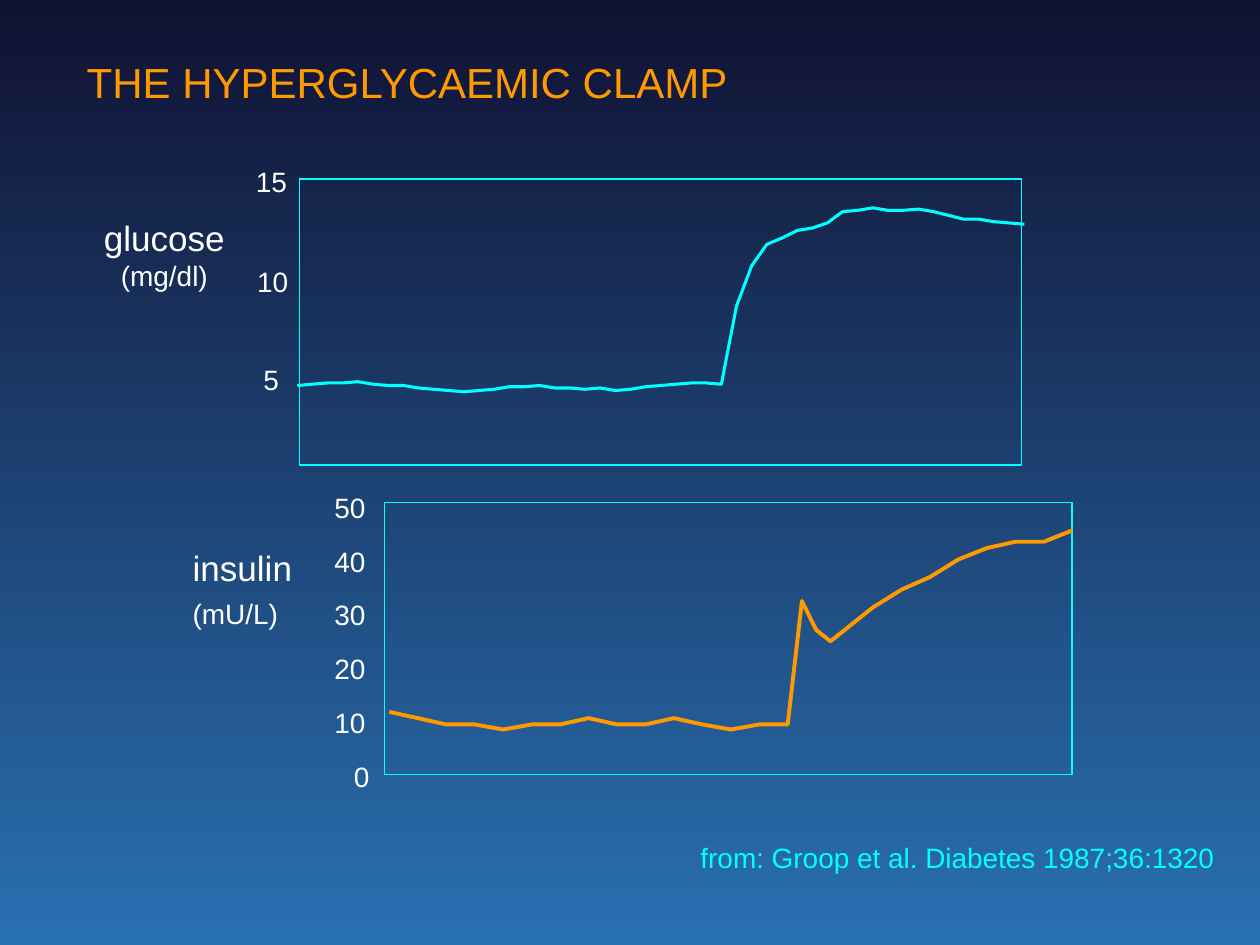
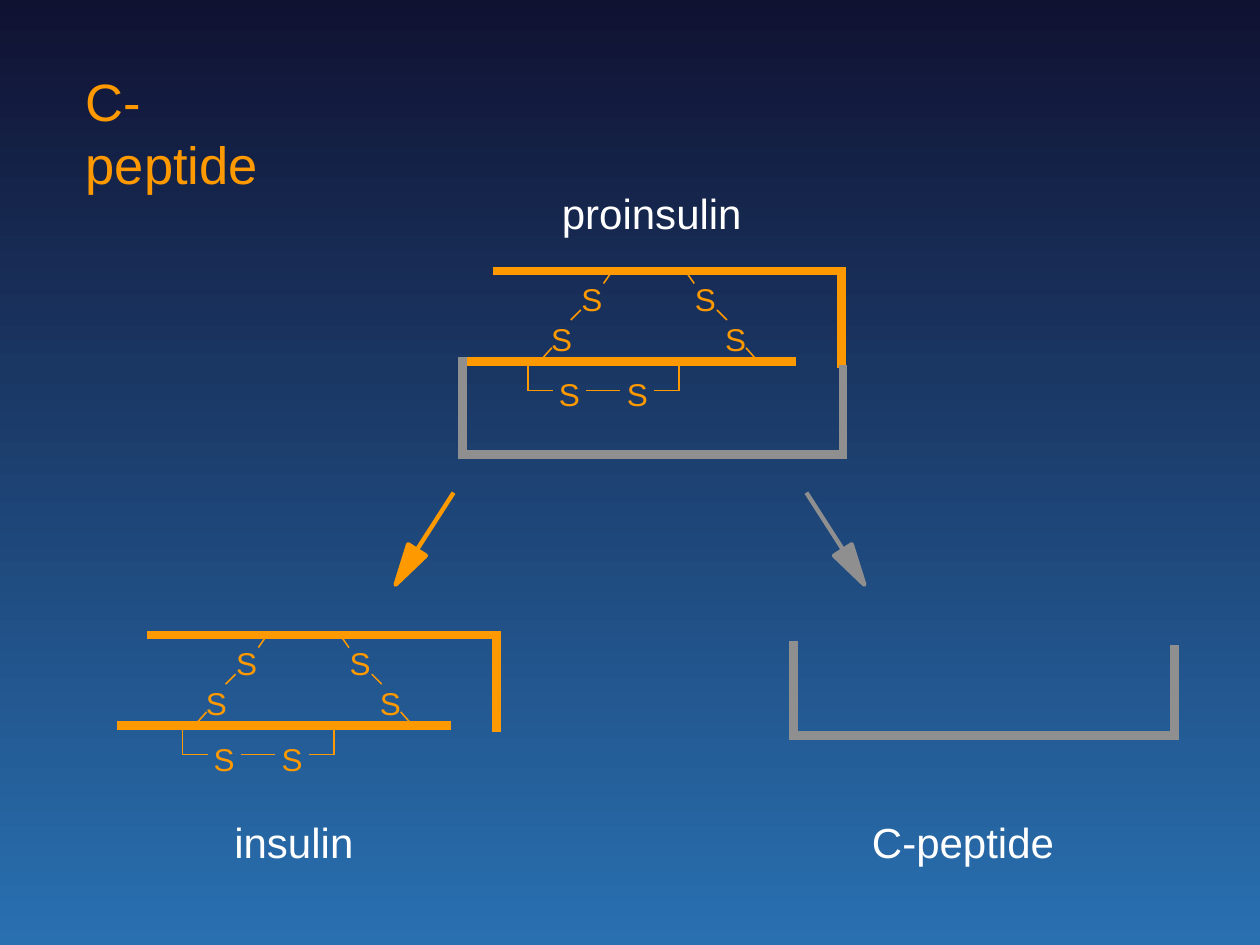
from lxml.etree import SubElement
from pptx import Presentation
from pptx.dml.color import RGBColor
from pptx.enum.shapes import MSO_CONNECTOR, MSO_SHAPE
from pptx.enum.text import MSO_AUTO_SIZE, PP_ALIGN
from pptx.oxml.ns import qn
from pptx.util import Inches, Pt

NIGHT = RGBColor(0x10, 0x12, 0x32)
BLUE = RGBColor(0x29, 0x70, 0xB1)
ORANGE = RGBColor(0xFF, 0x99, 0x00)
CYAN = RGBColor(0x00, 0xFF, 0xFF)
GREY = RGBColor(0x8F, 0x8F, 0x8F)
WHITE = RGBColor(0xFF, 0xFF, 0xFF)
FONT = "Arial"

CHAIN = 5
BOND = 0.88
ARROW = 2.5
CURVE_STEPS = 48

GLUCOSE = [
    3.06, 3.05, 3.04, 3.04, 3.03, 3.05, 3.06, 3.06, 3.08, 3.09,
    3.10, 3.11, 3.10, 3.09, 3.07, 3.07, 3.06, 3.08, 3.08, 3.09,
    3.08, 3.10, 3.09, 3.07, 3.06, 3.05, 3.04, 3.04, 3.05, 2.43,
    2.11, 1.94, 1.89, 1.83, 1.81, 1.77, 1.68, 1.67, 1.65, 1.67,
    1.67, 1.66, 1.68, 1.71, 1.74, 1.74, 1.76, 1.77, 1.78,
]
INSULIN_STEPS = [*range(0, 28, 2), *range(28, 34), *range(34, 49, 2)]
INSULIN = [
    5.65, 5.70, 5.75, 5.75, 5.79, 5.75, 5.75, 5.70, 5.75, 5.75,
    5.70, 5.75, 5.79, 5.75, 5.75, 4.77, 5.00, 5.09, 5.00, 4.91,
    4.82, 4.68, 4.58, 4.44, 4.35, 4.30, 4.30, 4.21,
]


def set_background(master):
    fill = master.background.fill
    fill.gradient()
    fill.gradient_angle = 270
    for stop, position, color in zip(fill.gradient_stops, (0, 1), (NIGHT, BLUE)):
        stop.position = position
        stop.color.rgb = color


def add_text(s, x, y, w, h, lines, color=WHITE, align=PP_ALIGN.LEFT,
             wrap=False, inset=(0, 0), gap=0):
    tf = s.shapes.add_textbox(Inches(x), Inches(y), Inches(w), Inches(h)).text_frame
    tf.margin_left = tf.margin_right = Inches(inset[0])
    tf.margin_top = tf.margin_bottom = Inches(inset[1])
    tf.word_wrap = wrap
    tf.auto_size = MSO_AUTO_SIZE.SHAPE_TO_FIT_TEXT
    tf.text = "\n".join(text for text, _ in lines)
    for i, (p, (_, size)) in enumerate(zip(tf.paragraphs, lines)):
        p.alignment = align
        p.space_before = Pt(gap if i else 0)
        for r in p.runs:
            r.font.name = FONT
            r.font.size = Pt(size)
            r.font.color.rgb = color


def add_line(s, x1, y1, x2, y2, color, width):
    line = s.shapes.add_connector(
        MSO_CONNECTOR.STRAIGHT, Inches(x1), Inches(y1), Inches(x2), Inches(y2))
    line.line.color.rgb = color
    line.line.width = Pt(width)
    SubElement(line._element.spPr, qn("a:effectLst"))


def add_outline(s, points, color, width, closed=False):
    (x, y), *rest = [(Inches(px), Inches(py)) for px, py in points]
    builder = s.shapes.build_freeform(x, y)
    builder.add_line_segments(rest, close=closed)
    sp = builder.convert_to_shape()
    sp.line.color.rgb = color
    sp.line.width = Pt(width)
    if closed:
        sp.fill.solid()
        sp.fill.fore_color.rgb = color
    else:
        sp.fill.background()
    sp.shadow.inherit = False


def add_plot_frame(s, x, y, w, h):
    sp = s.shapes.add_shape(
        MSO_SHAPE.RECTANGLE, Inches(x), Inches(y), Inches(w), Inches(h))
    sp.fill.background()
    sp.line.color.rgb = CYAN
    sp.line.width = Pt(0.75)
    sp.shadow.inherit = False


def add_curve(s, x, w, steps, heights, color, width):
    points = [(x + w * step / CURVE_STEPS, y) for step, y in zip(steps, heights)]
    add_outline(s, points, color, width)


def add_sulphur(s, center, y):
    add_text(s, center - 0.085, y, 0.17, 0.3, [("S", 18)], ORANGE)


def add_insulin_chains(s, x, y):
    def bond(x1, y1, x2, y2, width=BOND):
        add_line(s, x + x1, y + y1, x + x2, y + y2, ORANGE, width)

    bond(0.24, 0, 3.01, 0, CHAIN)
    bond(3.01, -0.03, 3.01, 0.77, CHAIN)
    bond(0, 0.72, 2.65, 0.72, CHAIN)

    bridge_axis, loop_axis = 1.48, 1.12
    for side in (-1, 1):
        for outer, low, inner, high in (
                (0.85, 0.7, 0.77, 0.61), (0.62, 0.39, 0.54, 0.31), (0.36, 0.1, 0.29, 0)):
            bond(bridge_axis + side * outer, low, bridge_axis + side * inner, high)
        for offset, top in ((0.45, 0.07), (0.69, 0.39)):
            add_sulphur(s, x + bridge_axis + side * offset, y + top)
        corner = loop_axis + side * 0.6
        bond(corner, 0.75, corner, 0.95)
        bond(corner, 0.95, loop_axis + side * 0.4, 0.95)
        add_sulphur(s, x + loop_axis + side * 0.27, y + 0.83)
    bond(loop_axis - 0.14, 0.95, loop_axis + 0.13, 0.95)


def add_c_peptide(s, x, bottom, left_leg, right_leg):
    w = 3.02
    for leg_x, leg in ((x, left_leg), (x + w, right_leg)):
        add_line(s, leg_x, bottom - leg, leg_x, bottom + 0.03, GREY, CHAIN)
    add_line(s, x, bottom, x + w, bottom, GREY, CHAIN)


def add_split_arrow(s, side, color):
    def mirrored(offset):
        return 5 + side * offset

    add_line(s, mirrored(1.4), 3.91, mirrored(1.83), 4.58, color, ARROW)
    head = [(mirrored(dx), y) for dx, y in ((1.62, 4.41), (1.86, 4.64), (1.76, 4.32))]
    add_outline(s, head, color, ARROW, closed=True)


def build_clamp_slide(s):
    add_plot_frame(s, 2.38, 1.42, 5.73, 2.27)
    for label, x, y, w in (("5", 2.09, 2.88, 0.12), ("10", 2.04, 2.1, 0.25),
                           ("15", 2.03, 1.31, 0.25)):
        add_text(s, x, y, w, 0.27, [(label, 16)])
    add_curve(s, 2.36, 5.77, range(CURVE_STEPS + 1), GLUCOSE, CYAN, 1.75)
    add_text(s, 0.82, 1.72, 0.97, 0.61, [("glucose", 20), ("(mg/dl)", 16)],
             align=PP_ALIGN.CENTER)

    add_plot_frame(s, 3.05, 3.99, 5.46, 2.16)
    for i, value in enumerate(range(50, 0, -10)):
        add_text(s, 2.65, 3.89 + 0.428 * i, 0.25, 0.27, [(str(value), 16)],
                 align=PP_ALIGN.RIGHT)
    add_text(s, 2.81, 6.03, 0.12, 0.27, [("0", 16)], align=PP_ALIGN.RIGHT)
    add_curve(s, 3.09, 5.42, INSULIN_STEPS, INSULIN, ORANGE, 2.25)
    add_text(s, 1.53, 4.34, 0.8, 0.67, [("insulin", 20), ("(mU/L)", 16)], gap=4.5)

    add_text(s, 5.56, 6.67, 4.13, 0.27,
             [("from: Groop et al. Diabetes 1987;36:1320", 16)], CYAN)
    add_text(s, 0.59, 0.4, 5.34, 0.51, [("THE HYPERGLYCAEMIC CLAMP", 24)], ORANGE,
             inset=(0.1, 0.05))


def build_peptide_slide(s):
    add_text(s, 0.68, 0.55, 1.75, 1, [("C-peptide", 30)], ORANGE, wrap=True)
    add_insulin_chains(s, 3.67, 2.15)
    add_c_peptide(s, 3.67, 3.61, 0.78, 0.71)
    add_insulin_chains(s, 0.93, 5.04)
    add_c_peptide(s, 6.3, 5.84, 0.75, 0.72)
    for name, x, y, w in (("proinsulin", 4.46, 1.49, 1.43), ("insulin", 1.86, 6.48, 0.95),
                          ("C-peptide", 6.92, 6.48, 1.45)):
        add_text(s, x, y, w, 0.4, [(name, 24)])
    add_split_arrow(s, -1, ORANGE)
    add_split_arrow(s, 1, GREY)


def main():
    prs = Presentation()
    prs.slide_width = Inches(10)
    prs.slide_height = Inches(7.5)
    set_background(prs.slide_master)
    for build in (build_clamp_slide, build_peptide_slide):
        build(prs.slides.add_slide(prs.slide_layouts[6]))
    prs.save("out.pptx")


if __name__ == "__main__":
    main()
